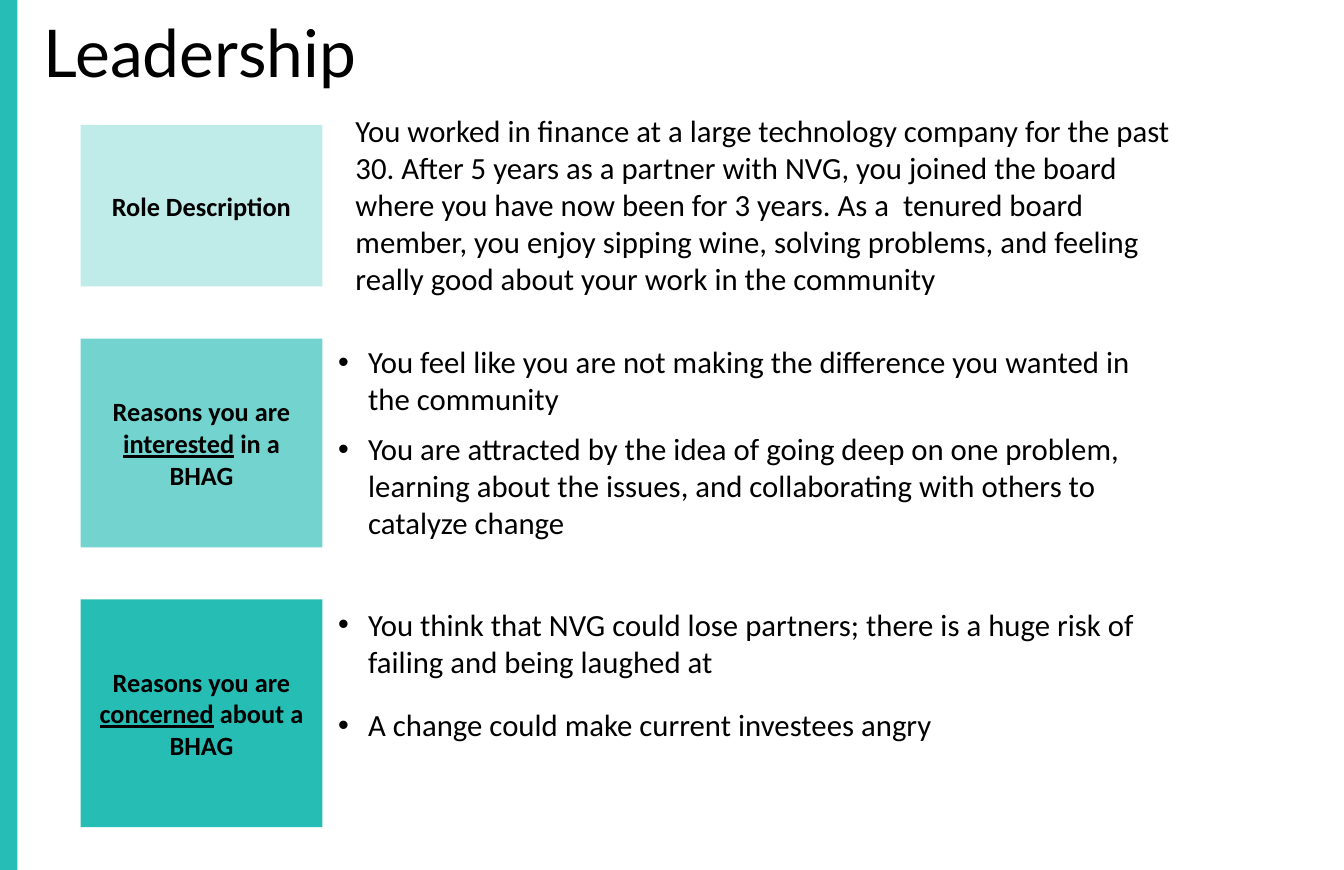
from lxml import etree
from pptx import Presentation
from pptx import util as u
from pptx.dml.color import RGBColor
from pptx.enum import shapes, text
from pptx.oxml.ns import qn

PX = 9144  # 100 px to the inch
COLORS = {"stripe": "26BDB6", "teal": "00B2A9", "ink": "000000"}
BODY = {"name": "Calibri", "size": u.Pt(14)}
LABEL = {"name": "Calibri", "size": u.Pt(12), "bold": True}
TITLE = {"name": "Lato", "size": u.Pt(30)}
BULLET_INDENT = 19

SECTIONS = [
    {"label_box": (51, 79, 153, 102), "opacity": 25,
     "label": [("Role Description", False)],
     "body_box": (215, 66, 540, 128), "bullets": False, "gap": 0,
     "body": ["You worked in finance at a large technology company for the past 30. "
              "After 5 years as a partner with NVG, you joined the board where you have "
              "now been for 3 years. As a  tenured board member, you enjoy sipping wine, "
              "solving problems, and feeling really good about your work in the community"]},
    {"label_box": (51, 214, 153, 132), "opacity": 55,
     "label": [("Reasons you are ", False), ("interested", True), (" in a BHAG", False)],
     "body_box": (204, 212, 550, 136), "bullets": True, "gap": 6,
     "body": ["You feel like you are not making the difference you wanted in the community",
              "You are attracted by the idea of going deep on one problem, learning about "
              "the issues, and collaborating with others to catalyze change"]},
    {"label_box": (51, 379, 153, 144), "opacity": 85,
     "label": [("Reasons you are ", False), ("concerned", True), (" about a BHAG", False)],
     "body_box": (204, 378, 550, 98), "bullets": True, "gap": 12,
     "body": ["You think that NVG could lose partners; there is a huge risk of failing "
              "and being laughed at",
              "A change could make current investees angry"]},
]


def emu(box):
    return [length * PX for length in box]


def add_span(para, words, style, **extra):
    span = para.add_run()
    span.text = words
    for name, value in {**style, **extra}.items():
        setattr(span.font, name, value)
    span.font.color.rgb = RGBColor.from_string(COLORS["ink"])


def add_block(page, box, color, opacity=100):
    block = page.shapes.add_shape(shapes.MSO_SHAPE.RECTANGLE, *emu(box))
    block.shadow.inherit = False
    block.line.fill.background()
    block.fill.solid()
    block.fill.fore_color.rgb = RGBColor.from_string(COLORS[color])
    if opacity < 100:
        tint = block.fill._xPr.find(".//" + qn("a:srgbClr"))
        etree.SubElement(tint, qn("a:alpha"), val=str(opacity * 1000))
    return block


def add_paragraphs(page, box, lines, style, **spacing):
    frame = page.shapes.add_textbox(*emu(box)).text_frame
    frame.word_wrap = True
    for index, line in enumerate(lines):
        para = frame.add_paragraph() if index else frame.paragraphs[0]
        for name, value in spacing.items():
            setattr(para, name, value)
        add_span(para, line, style)
    return frame


def add_bullets(frame):
    for para in frame.paragraphs:
        props = para._p.get_or_add_pPr()
        props.set("marL", str(BULLET_INDENT * PX))
        props.set("indent", str(-BULLET_INDENT * PX))
        etree.SubElement(props, qn("a:buFont"), typeface="Arial")
        etree.SubElement(props, qn("a:buChar"), char="•")


def add_label(page, box, spans, opacity):
    frame = add_block(page, box, "teal", opacity).text_frame
    frame.word_wrap = True
    frame.vertical_anchor = text.MSO_ANCHOR.MIDDLE
    para = frame.paragraphs[0]
    para.alignment = text.PP_ALIGN.CENTER
    for words, underlined in spans:
        add_span(para, words, LABEL, underline=underlined)


def add_section(page, section):
    add_label(page, section["label_box"], section["label"], section["opacity"])
    frame = add_paragraphs(page, section["body_box"], section["body"], BODY,
                           space_before=u.Pt(section["gap"]))
    if section["bullets"]:
        add_bullets(frame)


def main():
    deck = Presentation()
    deck.slide_width, deck.slide_height = emu((850, 550))
    page = deck.slides.add_slide(deck.slide_layouts[6])
    add_block(page, (0, 0, 11, 550), "stripe")
    add_paragraphs(page, (18, 8, 763, 82), ["Leadership"], TITLE, line_spacing=0.9)
    for section in SECTIONS:
        add_section(page, section)
    deck.save("out.pptx")


if __name__ == "__main__":
    main()
